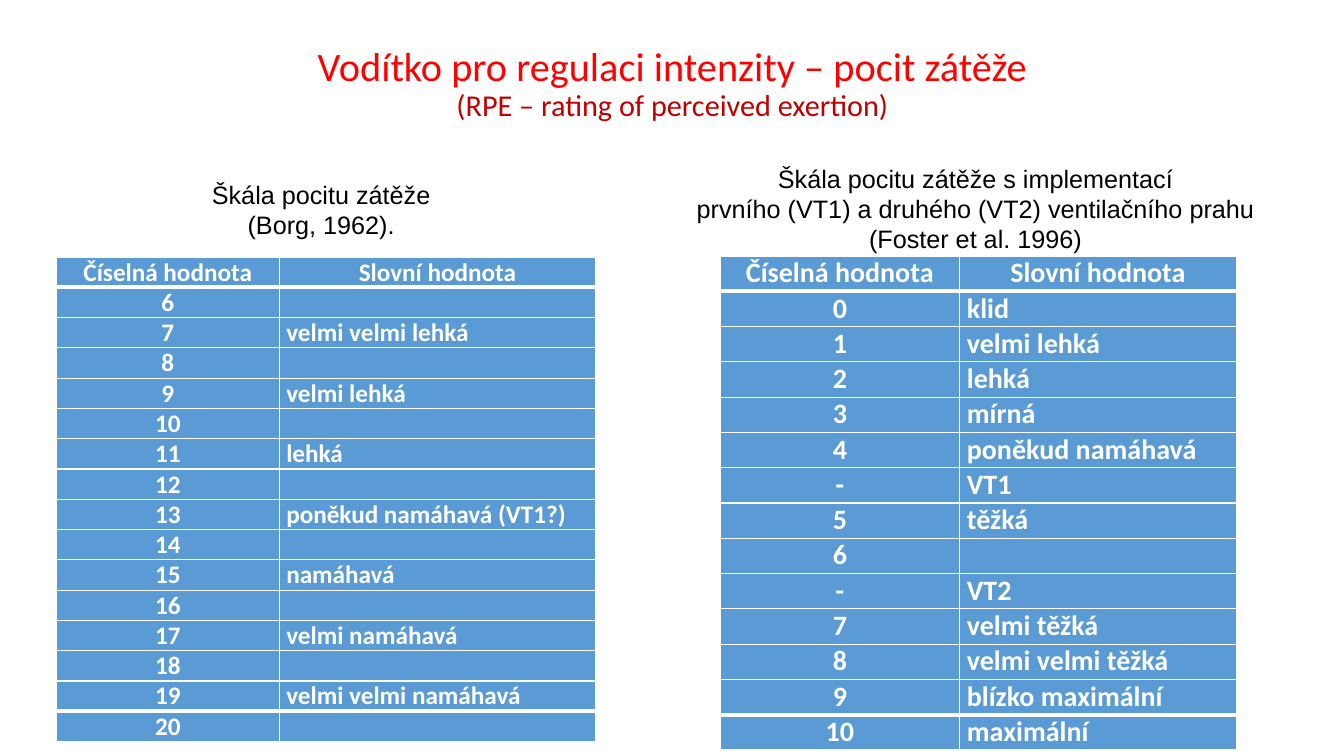
from dataclasses import dataclass

from pptx import Presentation
from pptx.dml.color import RGBColor
from pptx.enum import text as t
from pptx.oxml import parse_xml
from pptx.oxml.ns import nsdecls
from pptx.util import Inches, Pt


@dataclass(frozen=True)
class Theme:
    red: str = "FF0000"
    dark: str = "C00000"
    black: str = "000000"
    white: str = "FFFFFF"
    blue: str = "5B9BD5"
    head: str = "Calibri"
    body: str = "Arial"
    title: float = 28.8
    sub: float = 21.6
    label: float = 18
    borg: float = 18
    foster: float = 20
    thin: float = 1
    thick: float = 3


THEME = Theme()
CENTER, LEFT = t.PP_ALIGN.CENTER, t.PP_ALIGN.LEFT
HEADER = ("Číselná hodnota", "Slovní hodnota")
BORG = {7: "velmi velmi lehká", 9: "velmi lehká", 11: "lehká",
        13: "poněkud namáhavá (VT1?)", 15: "namáhavá",
        17: "velmi namáhavá", 19: "velmi velmi namáhavá"}
FOSTER = [("0", "klid"), ("1", "velmi lehká"), ("2", "lehká"),
          ("3", "mírná"), ("4", "poněkud namáhavá"), ("-", "VT1"),
          ("5", "těžká"), ("6", ""), ("-", "VT2"), ("7", "velmi těžká"),
          ("8", "velmi velmi těžká"), ("9", "blízko maximální"),
          ("10", "maximální")]


def add_run(para, words, size, color, font, bold=False):
    run = para.add_run()
    run.text = words
    run.font.size = Pt(size)
    run.font.name = font
    run.font.bold = bold
    run.font.color.rgb = RGBColor.from_string(color)


def add_box(slide, box, anchor):
    frame = slide.shapes.add_textbox(*map(Inches, box)).text_frame
    frame.word_wrap = True
    frame.vertical_anchor = anchor
    return frame


def add_title(slide):
    frame = add_box(slide, (0.92, 0.4, 11.5, 0.89), t.MSO_ANCHOR.MIDDLE)
    para = frame.paragraphs[0]
    para.alignment = CENTER
    para.line_spacing = 0.9
    add_run(para, "Vodítko pro regulaci intenzity – pocit zátěže",
            THEME.title, THEME.red, THEME.head)
    para.add_line_break()
    add_run(para, "(RPE – rating of perceived exertion)",
            THEME.sub, THEME.dark, THEME.head)


def add_label(slide, box, lines, anchor):
    frame = add_box(slide, box, anchor)
    for i, line in enumerate(lines):
        para = frame.add_paragraph() if i else frame.paragraphs[0]
        para.alignment = CENTER
        add_run(para, line, THEME.label, THEME.black, THEME.body)


def set_edges(cell, top, bottom):
    """Draw the four cell borders; they must come before the fill."""
    props = cell._tc.get_or_add_tcPr()
    edges = {"L": THEME.thin, "R": THEME.thin, "T": top, "B": bottom}
    for i, (side, width) in enumerate(edges.items()):
        props.insert(i, parse_xml(
            f'<a:ln{side} {nsdecls("a")} w="{Pt(width)}"><a:solidFill>'
            f'<a:srgbClr val="{THEME.white}"/></a:solidFill></a:ln{side}>'))


def add_scale(slide, left, top, widths, height, size, rows):
    """Add a table with heavy rules below the first and above the last row."""
    rows = [HEADER, *rows]
    last = len(rows) - 1
    table = slide.shapes.add_table(
        len(rows), len(widths), Inches(left), Inches(top),
        Inches(sum(widths)), Inches(height * len(rows))).table
    for col, width in zip(table.columns, widths):
        col.width = Inches(width)
    for r, row in enumerate(rows):
        table.rows[r].height = Inches(height)
        above = THEME.thick if r in (1, last) else THEME.thin
        below = THEME.thick if r in (0, last - 1) else THEME.thin
        for c, words in enumerate(row):
            cell = table.cell(r, c)
            cell.margin_left = cell.margin_right = Inches(0.07)
            cell.margin_top = cell.margin_bottom = 0
            cell.fill.solid()
            cell.fill.fore_color.rgb = RGBColor.from_string(THEME.blue)
            set_edges(cell, above, below)
            para = cell.text_frame.paragraphs[0]
            para.alignment = LEFT if r and c else CENTER
            para.font.size = Pt(size)
            if words:
                add_run(para, words, size, THEME.white, THEME.head, True)


def main():
    deck = Presentation()
    deck.slide_width, deck.slide_height = Inches(13.33), Inches(7.5)
    slide = deck.slides.add_slide(deck.slide_layouts[6])
    add_title(slide)
    add_scale(slide, 0.56, 2.55, (2.21, 3.14), 0.28, THEME.borg,
              [(str(n), BORG.get(n, "")) for n in range(6, 21)])
    add_label(slide, (1.76, 1.72, 2.85, 0.71),
              ["Škála pocitu zátěže (Borg, 1962)."], t.MSO_ANCHOR.MIDDLE)
    add_label(slide, (6.67, 1.57, 6.01, 1.01),
              ["Škála pocitu zátěže s implementací",
               "prvního (VT1) a druhého (VT2) ventilačního prahu",
               "(Foster et al. 1996)"], t.MSO_ANCHOR.TOP)
    add_scale(slide, 7.14, 2.54, (2.38, 2.74), 0.35, THEME.foster, FOSTER)
    deck.save("out.pptx")


if __name__ == "__main__":
    main()
